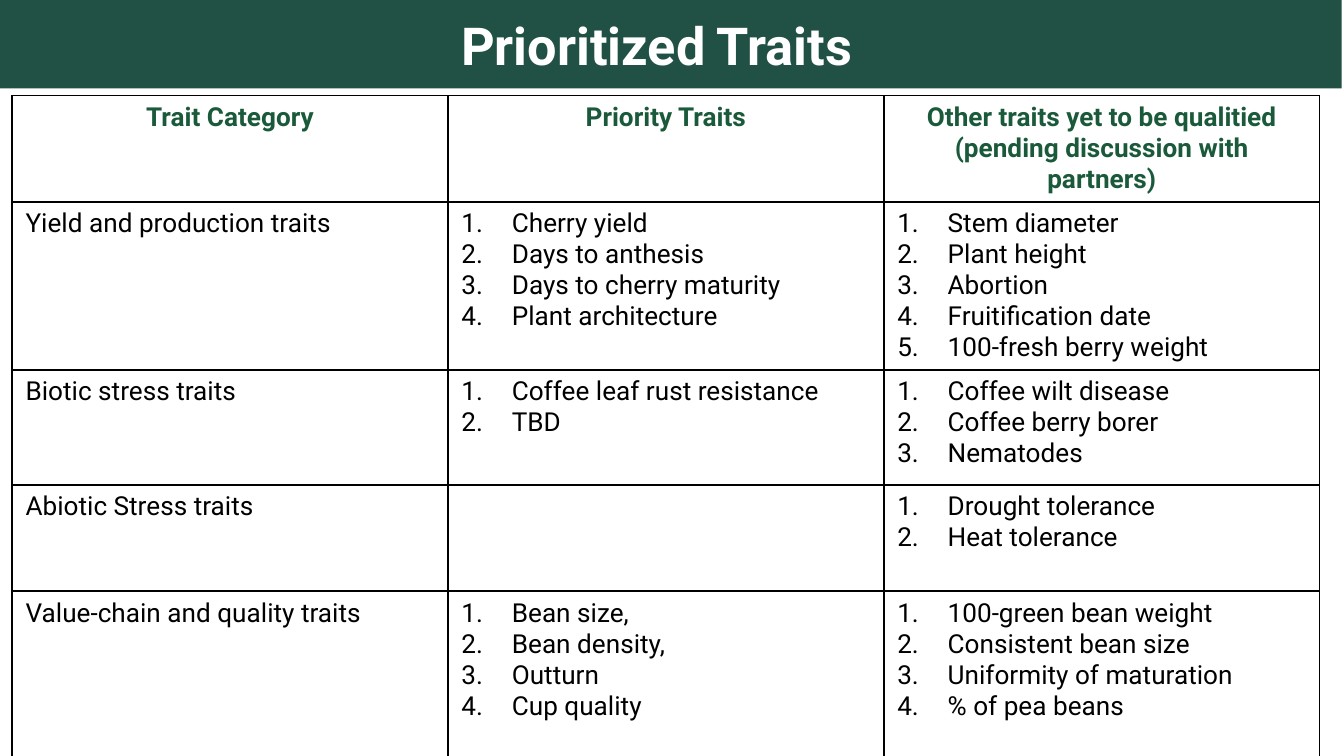
from dataclasses import dataclass

from lxml.etree import SubElement
from pptx import Presentation
from pptx.dml.color import RGBColor
from pptx.enum.shapes import MSO_SHAPE as Shape
from pptx.enum.text import MSO_ANCHOR as Anchor, PP_ALIGN as Align
from pptx.oxml.ns import qn
from pptx.slide import Slide
from pptx.table import _Cell as Cell
from pptx.util import Pt

COLORS = {
    "banner": "215145",
    "heading": "1A5A3B",
    "text": "000000",
    "border": "000000",
    "white": "FFFFFF",
}
FONT = "Roboto"
COL_WIDTH = 233.5
HEADER_HEIGHT = 39.6
LIST_INDENT = 27


@dataclass(frozen=True)
class TraitRow:
    category: str
    priority: tuple[str, ...]
    other: tuple[str, ...]
    height: float


HEADERS = (
    "Trait Category",
    "Priority Traits",
    "Other traits yet to be qualitied (pending discussion with partners)",
)
ROWS = (
    TraitRow(
        "Yield and production traits",
        ("Cherry yield", "Days to anthesis", "Days to cherry maturity", "Plant architecture"),
        ("Stem diameter", "Plant height", "Abortion", "Fruitification date",
         "100-fresh berry weight"),
        88.6,
    ),
    TraitRow(
        "Biotic stress traits",
        ("Coffee leaf rust resistance", "TBD"),
        ("Coffee wilt disease", "Coffee berry borer", "Nematodes"),
        61.7,
    ),
    TraitRow(
        "Abiotic Stress traits",
        (),
        ("Drought tolerance", "Heat tolerance"),
        57,
    ),
    TraitRow(
        "Value-chain and quality traits",
        ("Bean size,", "Bean density,", "Outturn", "Cup quality"),
        ("100-green bean weight", "Consistent bean size", "Uniformity of maturation",
         "% of pea beans"),
        88.6,
    ),
)


def rgb(name: str) -> RGBColor:
    return RGBColor.from_string(COLORS[name])


def add_run(p, text: str, size: float, color: str, bold: bool = False) -> None:
    r = p.add_run()
    r.text = text
    r.font.name = FONT
    r.font.size = Pt(size)
    r.font.bold = bold
    r.font.color.rgb = rgb(color)


def number_paragraph(p) -> None:
    pPr = p._p.get_or_add_pPr()
    pPr.set("marL", str(Pt(LIST_INDENT)))
    pPr.set("indent", str(-Pt(LIST_INDENT)))
    bullet_color = SubElement(pPr, qn("a:buClr"))
    SubElement(bullet_color, qn("a:srgbClr"), val=COLORS["text"])
    SubElement(pPr, qn("a:buFont"), typeface=FONT)
    SubElement(pPr, qn("a:buAutoNum"), type="arabicPeriod")


def style_cell(cell: Cell) -> None:
    """Draw all four borders and remove the table style's fill."""
    tcPr = cell._tc.get_or_add_tcPr()
    for side in ("lnL", "lnR", "lnT", "lnB"):
        ln = SubElement(tcPr, qn(f"a:{side}"), w=str(Pt(1)))
        fill = SubElement(ln, qn("a:solidFill"))
        SubElement(fill, qn("a:srgbClr"), val=COLORS["border"])
    cell.fill.background()


def fill_list(cell: Cell, items: tuple[str, ...]) -> None:
    tf = cell.text_frame
    for i, item in enumerate(items):
        p = tf.add_paragraph() if i else tf.paragraphs[0]
        number_paragraph(p)
        add_run(p, item, 14, "text")


def add_banner(s: Slide, title: str) -> None:
    sp = s.shapes.add_shape(Shape.RECTANGLE, Pt(-1.2), Pt(0), Pt(720), Pt(47.3))
    sp.shadow.inherit = False
    sp.fill.solid()
    sp.fill.fore_color.rgb = rgb("banner")
    sp.line.fill.background()
    tf = sp.text_frame
    tf.word_wrap = True
    tf.vertical_anchor = Anchor.MIDDLE
    p = tf.paragraphs[0]
    p.alignment = Align.CENTER
    add_run(p, title, 28, "white", bold=True)


def add_trait_table(s: Slide) -> None:
    heights = [HEADER_HEIGHT, *(row.height for row in ROWS)]
    table = s.shapes.add_table(
        len(heights), len(HEADERS), Pt(6.5), Pt(51.2),
        Pt(COL_WIDTH * len(HEADERS)), Pt(sum(heights)),
    ).table
    table.first_row = False
    table.horz_banding = False
    for col in table.columns:
        col.width = Pt(COL_WIDTH)
    for row, height in zip(table.rows, heights):
        row.height = Pt(height)
    for cell in table.iter_cells():
        style_cell(cell)

    for c, header in enumerate(HEADERS):
        p = table.cell(0, c).text_frame.paragraphs[0]
        p.alignment = Align.CENTER
        add_run(p, header, 14, "heading", bold=True)
    for i, row in enumerate(ROWS, start=1):
        add_run(table.cell(i, 0).text_frame.paragraphs[0], row.category, 14, "text")
        fill_list(table.cell(i, 1), row.priority)
        fill_list(table.cell(i, 2), row.other)


def main() -> None:
    prs = Presentation()
    prs.slide_width, prs.slide_height = Pt(720), Pt(405)
    s = prs.slides.add_slide(prs.slide_layouts[6])
    add_banner(s, "Prioritized Traits  ")
    add_trait_table(s)
    prs.save("out.pptx")


if __name__ == "__main__":
    main()
